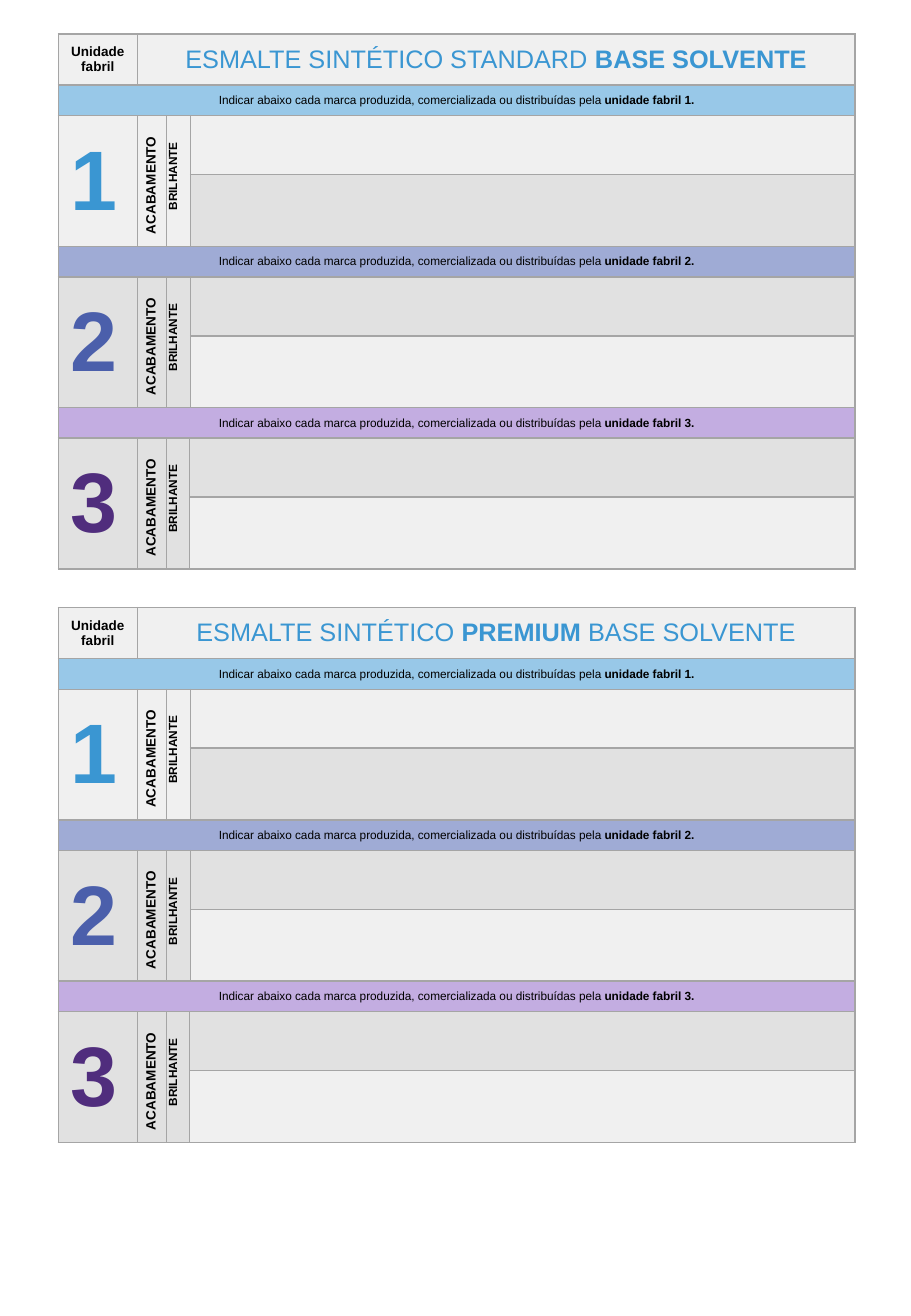
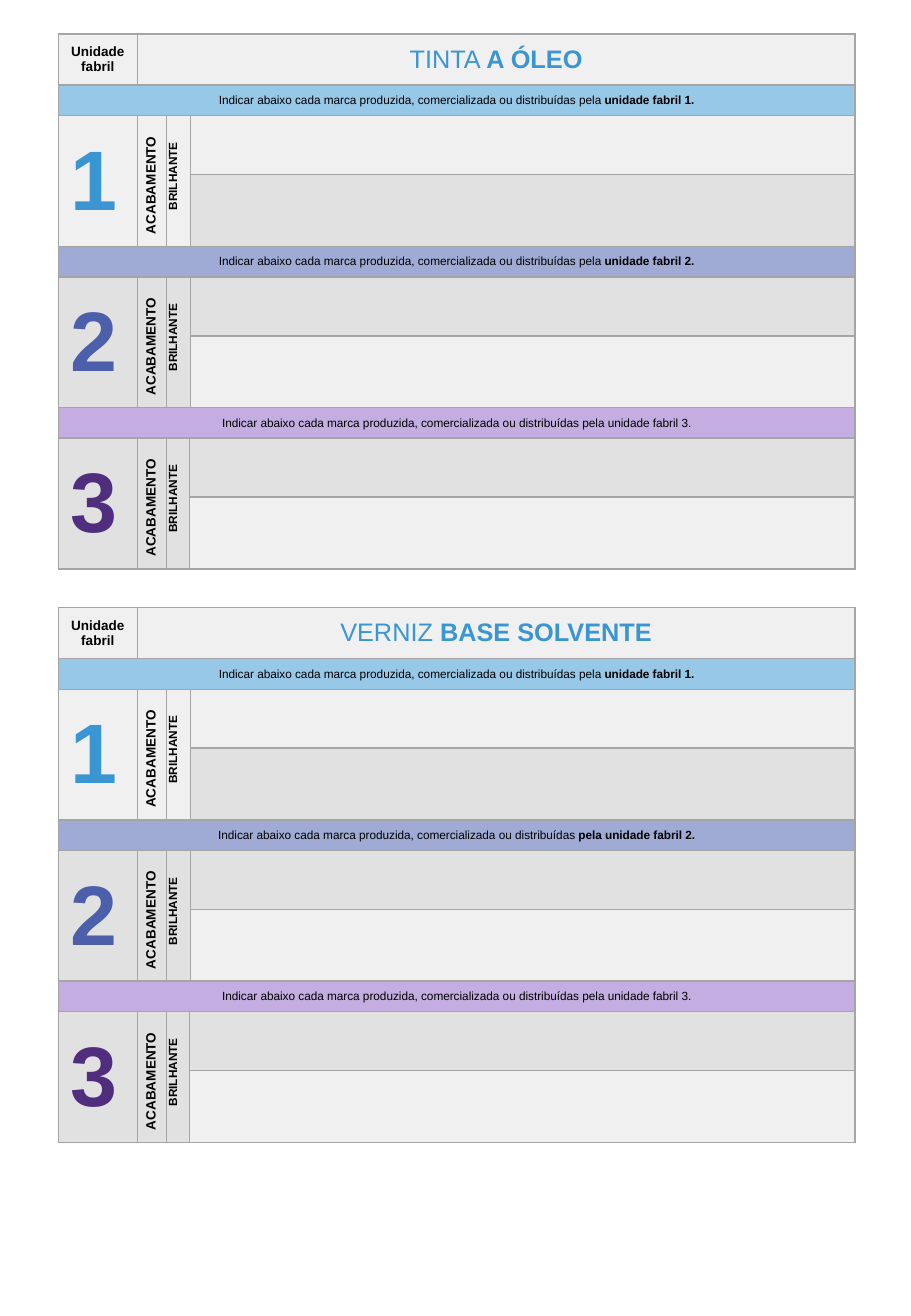
from dataclasses import dataclass

from lxml import etree
from pptx import Presentation
from pptx.dml.color import RGBColor
from pptx.enum import text as t
from pptx.oxml import ns
from pptx.util import Cm, Pt

# Shared look
FONT = "Arial"
BLACK = RGBColor(0x00, 0x00, 0x00)
LIGHT = RGBColor(0xF0, 0xF0, 0xF0)
DARK = RGBColor(0xE1, 0xE1, 0xE1)
BLUE = RGBColor(0x3A, 0x96, 0xD2)
BLUE_BAND = RGBColor(0x98, 0xC8, 0xE8)
INDIGO = RGBColor(0x4B, 0x5F, 0xAB)
INDIGO_BAND = RGBColor(0x9F, 0xAB, 0xD5)
PURPLE = RGBColor(0x50, 0x2D, 0x7D)
PURPLE_BAND = RGBColor(0xC3, 0xAD, 0xE1)
BORDER = RGBColor(0xA5, 0xA5, 0xA5)

# Shared measures, in centimetres
PANEL_LEFT, PANEL_TOPS = 1.22, (0.71, 12.7)
PANEL_WIDTH, NUMBER_WIDTH, COATING_WIDTH = 16.64, 1.65, 0.59
HEADER_HEIGHT, UNIT_HEIGHTS = 1.07, [0.64, 1.23, 1.5]

NOTE = ("Indicar abaixo cada marca produzida, comercializada ou distribuídas "
        "pela unidade fabril {}.")


@dataclass
class Unit:
    number: int
    color: RGBColor
    band: RGBColor
    upper: RGBColor
    lower: RGBColor
    finish_width: float


UNITS = (
    Unit(1, BLUE, BLUE_BAND, LIGHT, DARK, 0.51),
    Unit(2, INDIGO, INDIGO_BAND, DARK, LIGHT, 0.51),
    Unit(3, PURPLE, PURPLE_BAND, DARK, LIGHT, 0.49),
)

# For each panel: title as (text, bold) parts, and the word at which the
# bold ending of each unit's note starts (None for no bold)
SLIDES = (
    (
        ([("ESMALTE SINTÉTICO STANDARD ", False), ("BASE SOLVENTE", True)],
         ("unidade", "unidade", "unidade")),
        ([("ESMALTE SINTÉTICO ", False), ("PREMIUM", True),
          (" BASE SOLVENTE", False)],
         ("unidade", "unidade", "unidade")),
    ),
    (
        ([("TINTA ", False), ("A ÓLEO", True)],
         ("unidade", "unidade", None)),
        ([("VERNIZ ", False), ("BASE SOLVENTE", True)],
         ("unidade", "pela", None)),
    ),
)


def style_cell(cell, fill):
    """Grey border on every side and a plain fill."""
    properties = cell._tc.get_or_add_tcPr()
    for side in ("a:lnL", "a:lnR", "a:lnT", "a:lnB"):
        line = etree.SubElement(properties, ns.qn(side), w=str(Pt(1)))
        solid = etree.SubElement(line, ns.qn("a:solidFill"))
        etree.SubElement(solid, ns.qn("a:srgbClr"), val=str(BORDER))
    cell.fill.solid()
    cell.fill.fore_color.rgb = fill


def write(cell, parts, size, color=BLACK, centred=True, upright=False):
    """Put (text, bold) parts in a cell and return its paragraph."""
    cell.vertical_anchor = t.MSO_ANCHOR.MIDDLE
    if upright:
        cell._tc.get_or_add_tcPr().set("vert", "vert270")
    paragraph = cell.text_frame.paragraphs[0]
    paragraph.alignment = t.PP_ALIGN.CENTER if centred else t.PP_ALIGN.LEFT
    for words, bold in parts:
        run = paragraph.add_run()
        run.text = words
        run.font.name, run.font.size = FONT, Pt(size)
        run.font.bold, run.font.color.rgb = bold, color
    return paragraph


def note_parts(number, bold_from):
    sentence = NOTE.format(number)
    cut = sentence.index(bold_from) if bold_from else len(sentence)
    parts = [(sentence[:cut], False), (sentence[cut:], True)]
    return [part for part in parts if part[0]]


def add_unit_table(slide, left, top, unit, bold_from, title=None):
    """One factory unit, with the title row if given; returns its height."""
    heights = ([HEADER_HEIGHT] if title else []) + UNIT_HEIGHTS
    widths = [NUMBER_WIDTH, COATING_WIDTH, unit.finish_width]
    widths.append(PANEL_WIDTH - sum(widths))
    table = slide.shapes.add_table(
        len(heights), len(widths), Cm(left), Cm(top),
        Cm(PANEL_WIDTH), Cm(sum(heights))).table
    table.first_row = table.horz_banding = False
    for column, width in zip(table.columns, widths):
        column.width = Cm(width)
    for row, height in zip(table.rows, heights):
        row.height = Cm(height)

    # Fills and borders
    fills = ([LIGHT] if title else []) + [unit.band, unit.upper, unit.lower]
    for row, fill in zip(table.rows, fills):
        for cell in row.cells:
            style_cell(cell, fill)

    # Title row
    if title:
        table.cell(0, 1).merge(table.cell(0, 3))
        write(table.cell(0, 0), [("Unidade fabril", True)], 8)
        write(table.cell(0, 1), title, 15, BLUE)

    # Coloured note band
    band = len(heights) - len(UNIT_HEIGHTS)
    table.cell(band, 0).merge(table.cell(band, 3))
    write(table.cell(band, 0), note_parts(unit.number, bold_from), 7)

    # Unit number and upright labels, each over both brand rows
    number, coating, finish = (table.cell(band + 1, i) for i in range(3))
    for i, cell in enumerate((number, coating, finish)):
        cell.merge(table.cell(band + 2, i))
    write(number, [(str(unit.number), True)], 50, unit.color, centred=False)
    write(coating, [("ACABAMENTO", True)], 8, centred=False, upright=True)
    finish.margin_left = finish.margin_right = Cm(0.13)
    finish.margin_top = finish.margin_bottom = 0
    label = write(finish, [("BRILHANTE", True)], 7, upright=True)
    label.space_after = Pt(4)
    label._p.get_or_add_pPr().set("marL", str(Cm(0.2)))
    return sum(heights)


def add_panel(slide, left, top, title, bold_starts):
    """A product title with its three factory units stacked below."""
    for unit, bold_from in zip(UNITS, bold_starts):
        top += add_unit_table(slide, left, top, unit, bold_from,
                              title if unit is UNITS[0] else None)


def main():
    deck = Presentation()
    deck.slide_width, deck.slide_height = Cm(19.05), Cm(27.51)
    for panels in SLIDES:
        slide = deck.slides.add_slide(deck.slide_layouts[6])
        for top, (title, bold_starts) in zip(PANEL_TOPS, panels):
            add_panel(slide, PANEL_LEFT, top, title, bold_starts)
    deck.save("out.pptx")


if __name__ == "__main__":
    main()
